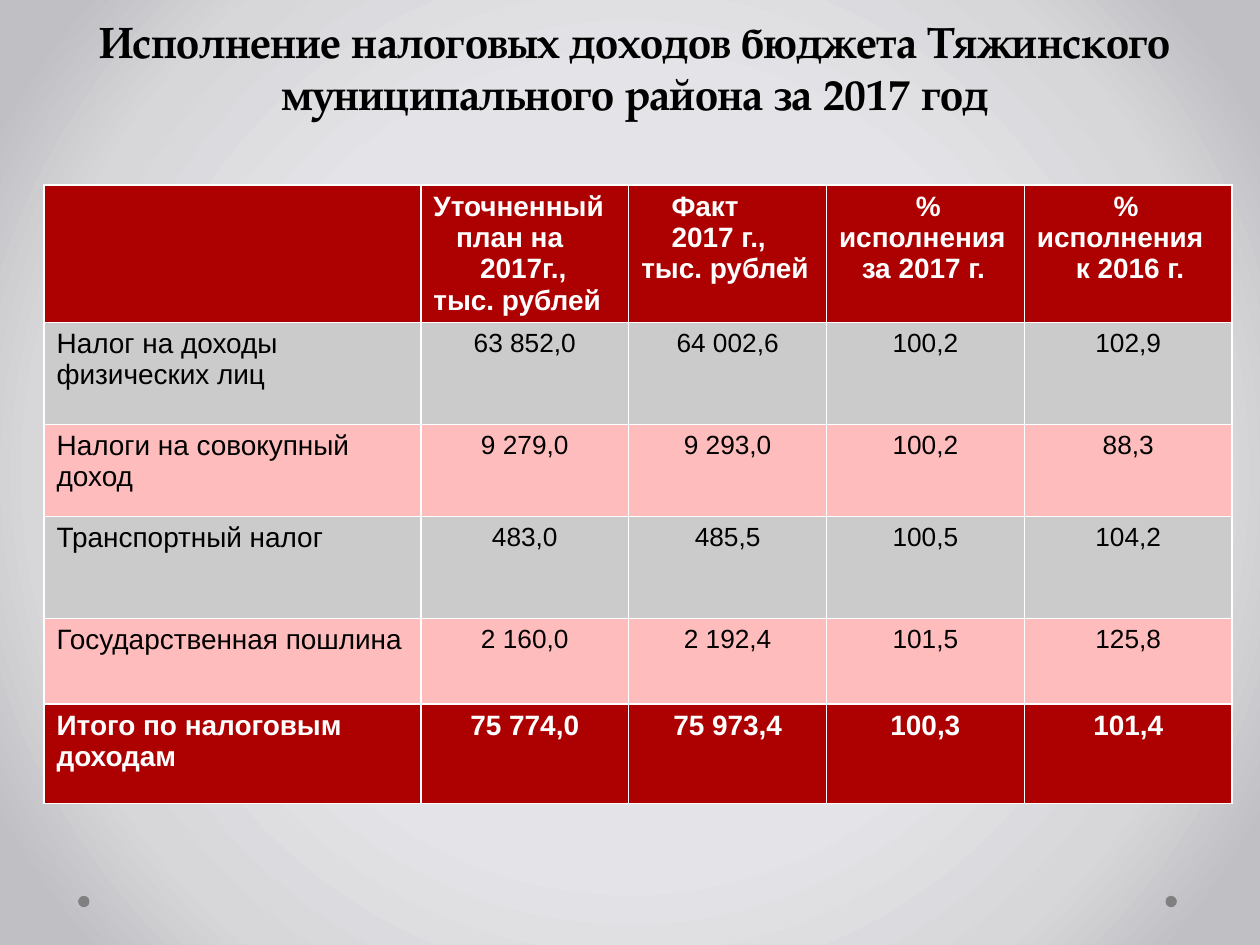
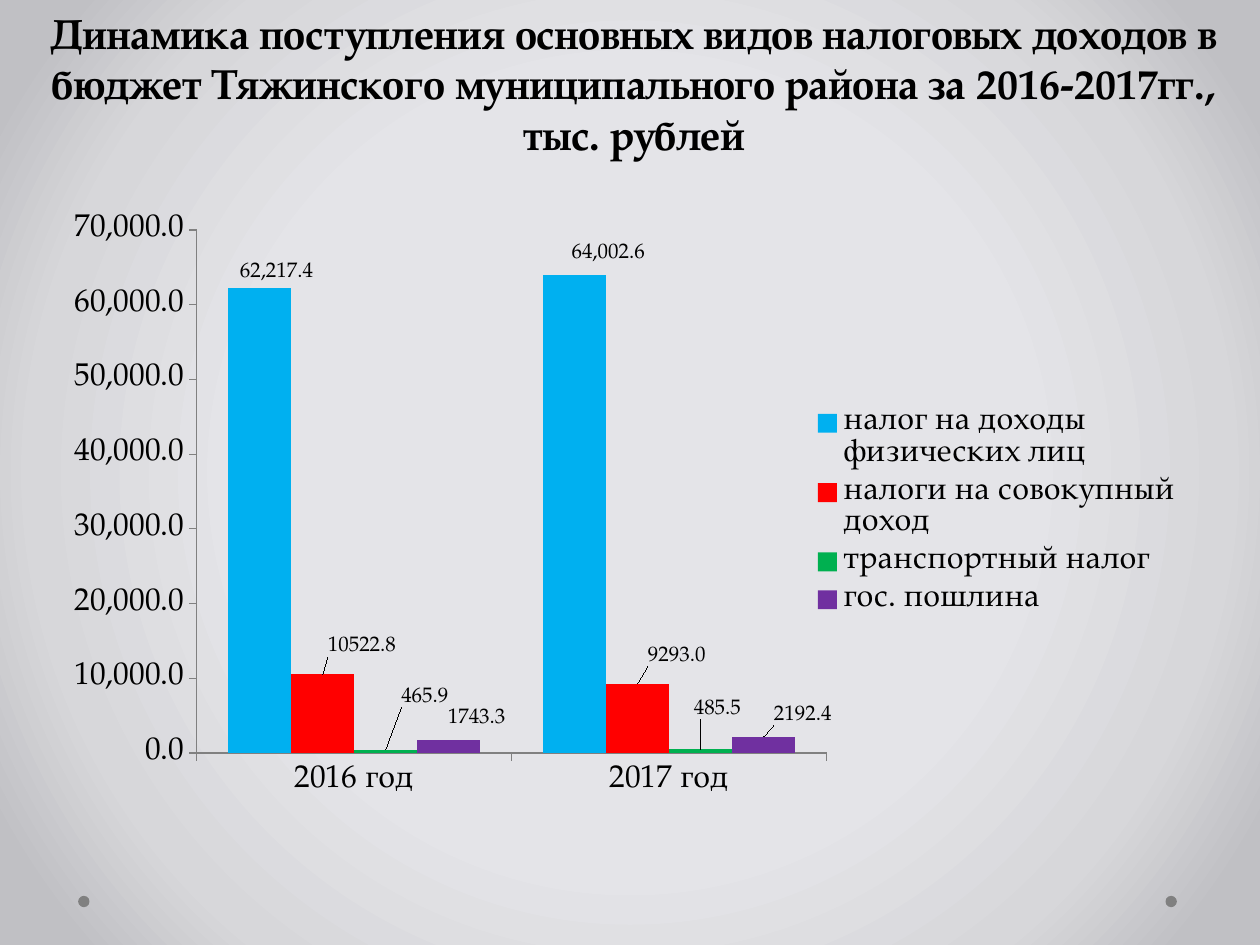
from lxml import etree
from pptx import Presentation
from pptx.chart.data import CategoryChartData
from pptx.dml.color import RGBColor
from pptx.enum.chart import XL_CHART_TYPE, XL_LABEL_POSITION, XL_LEGEND_POSITION, XL_TICK_MARK
from pptx.enum.shapes import MSO_SHAPE
from pptx.enum.text import MSO_ANCHOR, MSO_AUTO_SIZE, PP_ALIGN
from pptx.oxml import parse_xml
from pptx.oxml.ns import nsdecls, qn
from pptx.util import Inches, Pt

CENTER, LEFT = PP_ALIGN.CENTER, PP_ALIGN.LEFT
OUTSIDE = XL_TICK_MARK.OUTSIDE
OUTSIDE_END = XL_LABEL_POSITION.OUTSIDE_END

BLACK = RGBColor(0x00, 0x00, 0x00)
WHITE = RGBColor(0xFF, 0xFF, 0xFF)
GRAY = RGBColor(0x80, 0x80, 0x80)
DARK_RED = RGBColor(0xAD, 0x01, 0x01)
PINK = RGBColor(0xFF, 0xBC, 0xBC)
LIGHT_GRAY = RGBColor(0xCB, 0xCB, 0xCB)
SKY_BLUE = RGBColor(0x00, 0xB0, 0xF0)
RED = RGBColor(0xFF, 0x00, 0x00)
GREEN = RGBColor(0x00, 0xB0, 0x50)
PURPLE = RGBColor(0x70, 0x30, 0xA0)

SERIF, SANS = "TeX Gyre Pagella", "Arial"


def add_titled_slide(title_text, left, width, height, size):
    """Add a slide with its title and the two corner dots."""
    slide = presentation.slides.add_slide(presentation.slide_layouts[5])
    for dot_left in (9.25, 0.62):
        dot = slide.shapes.add_shape(MSO_SHAPE.OVAL, Inches(dot_left), Inches(7.11),
                                     Inches(0.09), Inches(0.09))
        dot.shadow.inherit = False
        dot.fill.solid()
        dot.fill.fore_color.rgb = GRAY
        dot.line.fill.background()
    title = slide.shapes.title
    title.left, title.top = Inches(left), Inches(0.13)
    title.width, title.height = Inches(width), Inches(height)
    frame = title.text_frame
    frame.text = title_text
    frame.word_wrap = True
    frame.auto_size = MSO_AUTO_SIZE.NONE
    frame.vertical_anchor = MSO_ANCHOR.BOTTOM
    paragraph = frame.paragraphs[0]
    paragraph.alignment = CENTER
    style_font(paragraph.runs[0].font, SERIF, size, BLACK, True)
    return slide


def style_font(font, name, size, color, bold=False):
    font.name, font.size, font.bold = name, Pt(size), bold
    font.color.rgb = color


presentation = Presentation()
presentation.slide_width, presentation.slide_height = Inches(10), Inches(7.5)

# Radial background shared through the slide master
master = presentation.slide_master
master.background.fill.solid()
background = master.element.find(".//" + qn("p:bgPr"))
stops = "".join(
    f'<a:gs pos="{position * 1000}"><a:srgbClr val="{color}"/></a:gs>'
    for position, color in ((50, "E4E4E8"), (76, "D7D7DA"), (92, "C0C0C4")))
background.replace(background[0], parse_xml(
    f'<a:gradFill {nsdecls("a")} rotWithShape="1"><a:gsLst>{stops}</a:gsLst>'
    '<a:path path="circle"><a:fillToRect l="50000" t="50000" r="50000" b="50000"/></a:path>'
    '</a:gradFill>'))

# Slide 1: tax revenue table
slide = add_titled_slide(
    "Исполнение налоговых доходов бюджета Тяжинского муниципального района за 2017 год",
    0.51, 9.06, 0.87, 25)

# Each header line carries its first-line indent in inches
headers = [
    [],
    [("Уточненный", 0), ("план на", 0.18), ("2017г., тыс. рублей", 0.37)],
    [("Факт", 0.24), ("2017 г., тыс. рублей", 0.24)],
    [("% исполнения", 0.61), ("за 2017 г.", 0.18)],
    [("% исполнения", 0.61), ("к 2016 г.", 0.31)],
]
tax_rows = [
    ("Налог на доходы физических лиц", "63 852,0", "64 002,6", "100,2", "102,9"),
    ("Налоги на совокупный доход", "9 279,0", "9 293,0", "100,2", "88,3"),
    ("Транспортный налог", "483,0", "485,5", "100,5", "104,2"),
    ("Государственная пошлина", "2 160,0", "2 192,4", "101,5", "125,8"),
    ("Итого по налоговым доходам", "75 774,0", "75 973,4", "100,3", "101,4"),
]
column_widths = (2.99, 1.65, 1.57, 1.57, 1.65)
row_heights = (0.87, 0.81, 0.73, 0.81, 0.68, 0.79)
table = slide.shapes.add_table(
    len(row_heights), len(column_widths), Inches(0.35), Inches(1.47),
    Inches(sum(column_widths)), Inches(sum(row_heights))).table
for column, width in zip(table.columns, column_widths):
    column.width = Inches(width)
for row, height in zip(table.rows, row_heights):
    row.height = Inches(height)

for column_index, lines in enumerate(headers):
    cell = table.cell(0, column_index)
    cell.fill.solid()
    cell.fill.fore_color.rgb = DARK_RED
    cell.text_frame.text = "\n".join(text for text, indent in lines)
    for paragraph, (text, indent) in zip(cell.text_frame.paragraphs, lines):
        properties = paragraph._p.get_or_add_pPr()
        properties.set("marL", "0")
        properties.set("indent", str(Inches(indent)))
        style_font(paragraph.runs[0].font, SANS, 16, WHITE, True)

for row_index, values in enumerate(tax_rows, 1):
    is_total = row_index == len(tax_rows)
    band = DARK_RED if is_total else (LIGHT_GRAY if row_index % 2 else PINK)
    for column_index, value in enumerate(values):
        cell = table.cell(row_index, column_index)
        cell.fill.solid()
        cell.fill.fore_color.rgb = band
        cell.text_frame.text = value
        paragraph = cell.text_frame.paragraphs[0]
        paragraph.alignment = CENTER if column_index else LEFT
        size = 15 if column_index and not is_total else 16
        style_font(paragraph.runs[0].font, SANS, size, WHITE if is_total else BLACK, is_total)

# Slide 2: revenue chart
slide = add_titled_slide(
    "Динамика поступления основных видов налоговых доходов в бюджет Тяжинского "
    "муниципального района за 2016-2017гг., тыс. рублей", 0.28, 9.5, 1.18, 24)

# Name, values, colour, label format, label offsets as shares of the chart
taxes = [
    ("налог на доходы физических лиц", (62217.4, 64002.6), SKY_BLUE, "#,##0.0",
     ((0.015, 0), (0.03, -0.01))),
    ("налоги на совокупный доход", (10522.8, 9293.0), RED, "0.0",
     ((0.035, -0.02), (0.035, -0.02))),
    ("транспортный налог", (465.9, 485.5), GREEN, "0.0",
     ((0.035, -0.06), (0.015, -0.04))),
    ("гос. пошлина", (1743.3, 2192.4), PURPLE, "0.0",
     ((0.025, -0.01), (0.035, -0.01))),
]
chart_data = CategoryChartData(number_format="#,##0.0")
chart_data.categories = ["2016 год", "2017 год"]
for name, values, color, number_format, offsets in taxes:
    chart_data.add_series(name, values)
chart = slide.shapes.add_chart(
    XL_CHART_TYPE.COLUMN_CLUSTERED, Inches(0.59), Inches(1.62),
    Inches(8.9), Inches(4.88), chart_data).chart
style_font(chart.font, SERIF, 18, BLACK)
chart.has_title = False
chart.has_legend = True
chart.legend.position = XL_LEGEND_POSITION.RIGHT
chart.legend.include_in_layout = False

for axis in (chart.category_axis, chart.value_axis):
    axis.has_major_gridlines = False
    axis.major_tick_mark = OUTSIDE
    axis.format.line.color.rgb = GRAY
    axis.format.line.width = Pt(0.75)
chart.value_axis.minimum_scale = 0
chart.value_axis.maximum_scale = 70000
chart.value_axis.major_unit = 10000
chart.value_axis.tick_labels.number_format = "#,##0.0"
chart.value_axis.tick_labels.number_format_is_linked = False

plot = chart.plots[0]
plot.gap_width, plot.overlap = 100, 0
plot.vary_by_categories = False
for series, (name, values, color, number_format, offsets) in zip(plot.series, taxes):
    series.format.fill.solid()
    series.format.fill.fore_color.rgb = color
    labels = series.data_labels
    labels.show_value = True
    labels.number_format = number_format
    labels.number_format_is_linked = False
    style_font(labels.font, SERIF, 12, BLACK)
    for point_index in range(len(values)):
        label = series.points[point_index].data_label
        label.position = OUTSIDE_END
        style_font(label.font, SERIF, 12, BLACK)

label_places = [(tax[3], offset) for tax in taxes for offset in tax[4]]
for label, (number_format, (x, y)) in zip(chart.element.iter(qn("c:dLbl")), label_places):
    label.insert(1, parse_xml(
        f'<c:layout {nsdecls("c")}><c:manualLayout><c:x val="{x}"/><c:y val="{y}"/>'
        '</c:manualLayout></c:layout>'))
    label.insert(2, parse_xml(
        f'<c:numFmt {nsdecls("c")} formatCode="{number_format}" sourceLinked="0"/>'))

plot_area = chart.element.find(".//" + qn("c:plotArea"))
for layout in plot_area.findall(qn("c:layout")):
    plot_area.remove(layout)
layout = etree.Element(qn("c:layout"))
manual_layout = etree.SubElement(layout, qn("c:manualLayout"))
for tag, value in (("layoutTarget", "inner"), ("xMode", "edge"), ("yMode", "edge"),
                   ("x", "0.107"), ("y", "0.042"), ("w", "0.563"), ("h", "0.851")):
    etree.SubElement(manual_layout, qn("c:" + tag)).set("val", value)
plot_area.insert(0, layout)

presentation.save("out.pptx")
